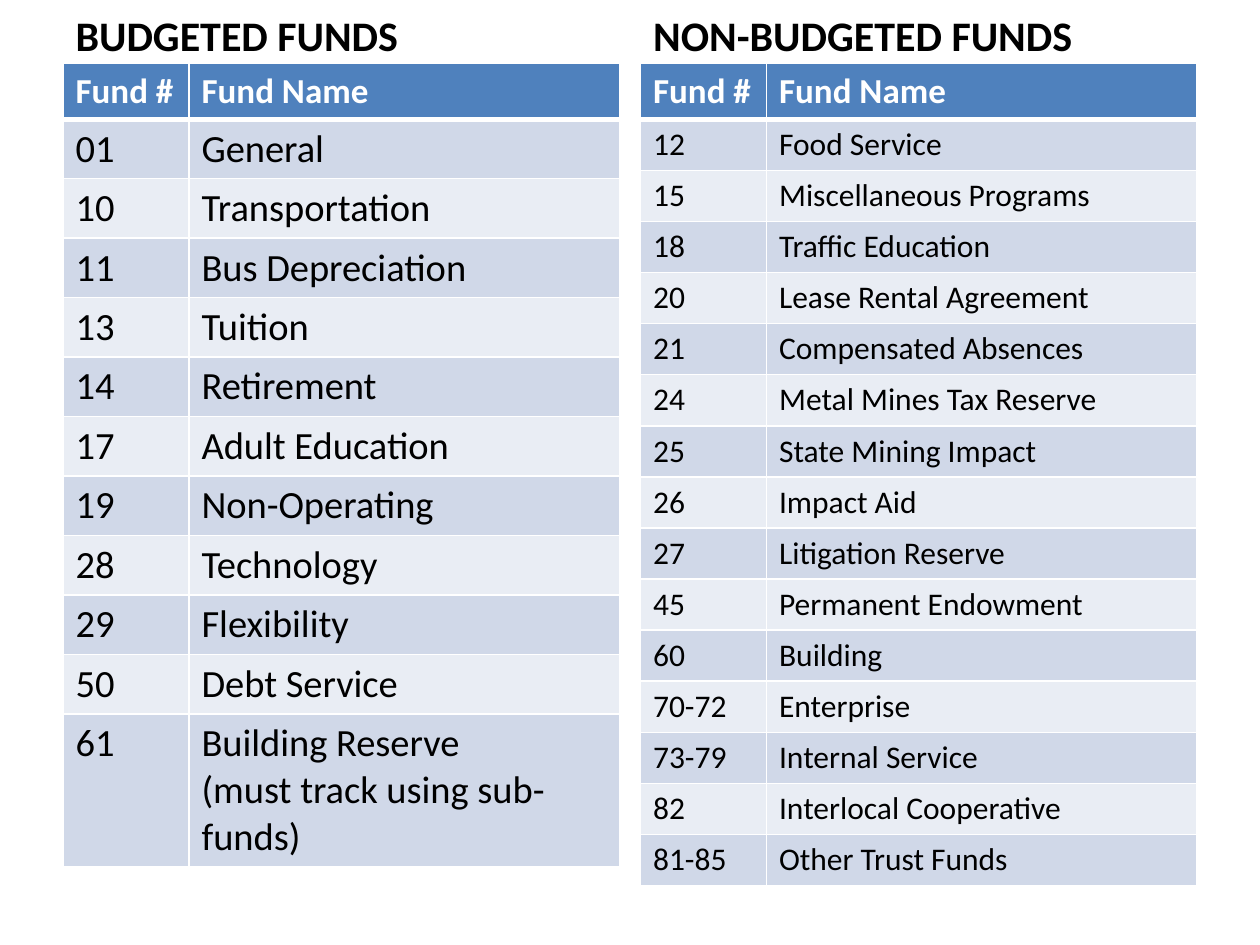
from dataclasses import dataclass

from lxml.etree import SubElement
from pptx import Presentation
from pptx.dml.color import RGBColor
from pptx.enum.text import MSO_ANCHOR, MSO_AUTO_SIZE
from pptx.oxml.ns import qn
from pptx.util import Pt

BLACK = RGBColor(0x00, 0x00, 0x00)
WHITE = RGBColor(0xFF, 0xFF, 0xFF)
HEADER_BLUE = RGBColor(0x4F, 0x81, 0xBD)
BANDS = (RGBColor(0xD0, 0xD8, 0xE8), RGBColor(0xE9, 0xED, 0xF4))

FONT = "Calibri"
COLUMN_WIDTHS = (72, 246)
TABLE_WIDTH = sum(COLUMN_WIDTHS)
TABLE_TOP = 36.4
HEADER_HEIGHT = 31.6
HEADING_HEIGHT = 38
COLUMN_NAMES = ("Fund #", "Fund Name")
COMPARISON_LAYOUT = 4


@dataclass(frozen=True)
class FundGroup:
    heading: str
    placeholder_index: int
    left: float
    text_size: float
    row_height: float
    funds: tuple[tuple[str, str], ...]


GROUPS = (
    FundGroup("BUDGETED FUNDS", 1, 36, 22, 34, (
        ("01", "General"),
        ("10", "Transportation"),
        ("11", "Bus Depreciation"),
        ("13", "Tuition"),
        ("14", "Retirement"),
        ("17", "Adult Education"),
        ("19", "Non-Operating"),
        ("28", "Technology"),
        ("29", "Flexibility"),
        ("50", "Debt Service"),
        ("61", "Building Reserve\n(must track using sub-funds)"),
    )),
    FundGroup("NON-BUDGETED FUNDS", 3, 366, 18, 29.2, (
        ("12", "Food Service"),
        ("15", "Miscellaneous Programs"),
        ("18", "Traffic Education"),
        ("20", "Lease Rental Agreement"),
        ("21", "Compensated Absences"),
        ("24", "Metal Mines Tax Reserve"),
        ("25", "State Mining Impact"),
        ("26", "Impact Aid"),
        ("27", "Litigation Reserve"),
        ("45", "Permanent Endowment"),
        ("60", "Building"),
        ("70-72", "Enterprise"),
        ("73-79", "Internal Service"),
        ("82", "Interlocal Cooperative"),
        ("81-85", "Other Trust Funds"),
    )),
)


def write_text(text_frame, text: str, *, size: float, color: RGBColor = BLACK,
               bold: bool = False) -> None:
    """Fill the frame, one paragraph for each line of text."""
    text_frame.text = text
    for paragraph in text_frame.paragraphs:
        for run in paragraph.runs:
            run.font.name = FONT
            run.font.size = Pt(size)
            run.font.bold = bold
            run.font.color.rgb = color


def set_borders(cell, *, top: float = 1, bottom: float = 1) -> None:
    """Draw white cell borders; call before the fill, which must follow them."""
    properties = cell._tc.get_or_add_tcPr()
    for side, width in (("L", 1), ("R", 1), ("T", top), ("B", bottom)):
        line = SubElement(properties, qn(f"a:ln{side}"), w=str(Pt(width)))
        solid_fill = SubElement(line, qn("a:solidFill"))
        SubElement(solid_fill, qn("a:srgbClr"), val=str(WHITE))


def add_heading(slide, group: FundGroup) -> None:
    shape = next(placeholder for placeholder in slide.placeholders
                 if placeholder.placeholder_format.idx == group.placeholder_index)
    shape.left, shape.top = Pt(group.left), Pt(0)
    shape.width, shape.height = Pt(TABLE_WIDTH), Pt(HEADING_HEIGHT)
    write_text(shape.text_frame, group.heading, size=24, bold=True)
    shape.text_frame.vertical_anchor = MSO_ANCHOR.BOTTOM
    shape.text_frame.auto_size = MSO_AUTO_SIZE.NONE


def add_fund_table(slide, group: FundGroup) -> None:
    rows = (COLUMN_NAMES, *group.funds)
    height = HEADER_HEIGHT + group.row_height * len(group.funds)
    table = slide.shapes.add_table(
        len(rows), len(COLUMN_NAMES),
        Pt(group.left), Pt(TABLE_TOP), Pt(TABLE_WIDTH), Pt(height)).table
    for column, width in zip(table.columns, COLUMN_WIDTHS):
        column.width = Pt(width)
    for row_index, values in enumerate(rows):
        is_header = row_index == 0
        table.rows[row_index].height = Pt(HEADER_HEIGHT if is_header else group.row_height)
        for column_index, value in enumerate(values):
            cell = table.cell(row_index, column_index)
            set_borders(cell, top=3 if row_index == 1 else 1, bottom=3 if is_header else 1)
            cell.fill.solid()
            cell.fill.fore_color.rgb = HEADER_BLUE if is_header else BANDS[(row_index - 1) % 2]
            write_text(cell.text_frame, value,
                       size=20 if is_header else group.text_size,
                       color=WHITE if is_header else BLACK, bold=is_header)


def main() -> None:
    presentation = Presentation()
    presentation.slide_width, presentation.slide_height = Pt(720), Pt(540)
    slide = presentation.slides.add_slide(presentation.slide_layouts[COMPARISON_LAYOUT])
    for group in GROUPS:
        add_heading(slide, group)
        add_fund_table(slide, group)
    for placeholder in list(slide.placeholders):
        if placeholder.has_text_frame and not placeholder.text_frame.text:
            placeholder.element.getparent().remove(placeholder.element)
    presentation.save("out.pptx")


if __name__ == "__main__":
    main()
